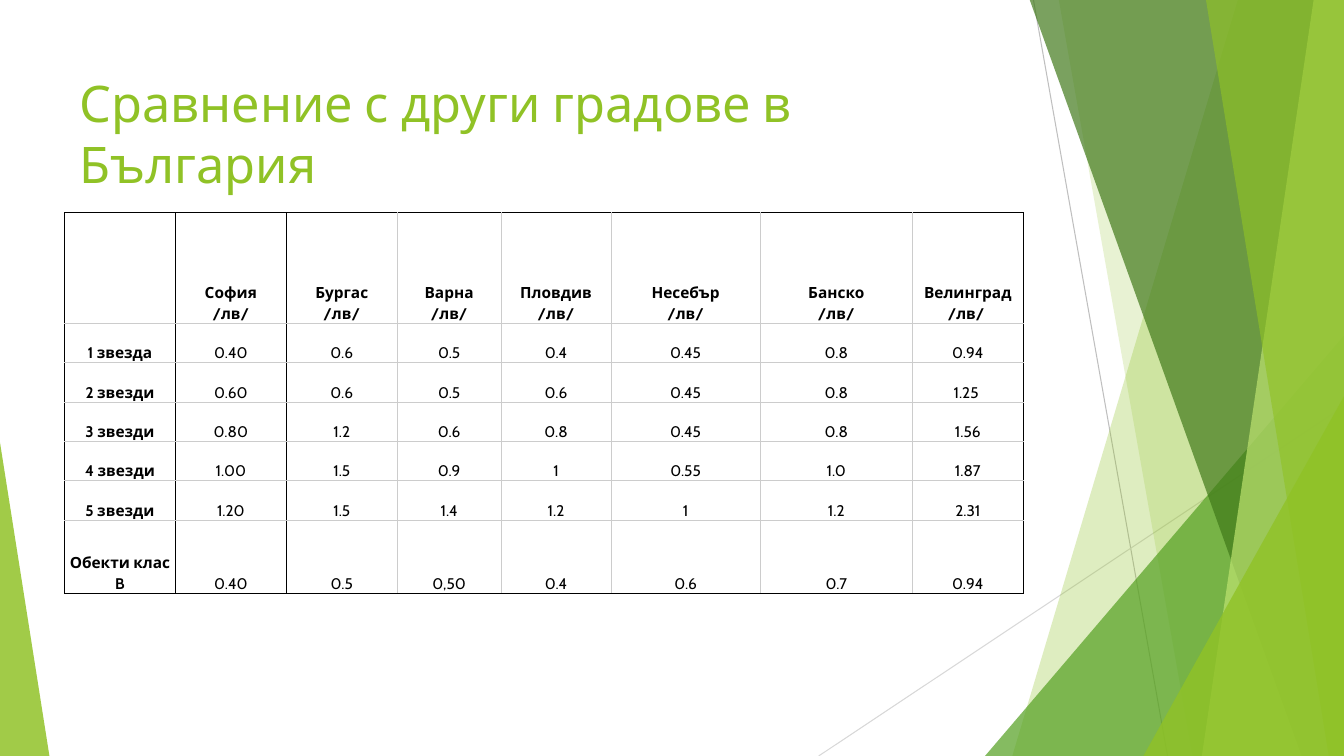
from lxml.etree import SubElement
from pptx import Presentation
from pptx.dml.color import RGBColor
from pptx.enum.shapes import MSO_CONNECTOR, MSO_SHAPE
from pptx.enum.text import MSO_ANCHOR, PP_ALIGN
from pptx.oxml.ns import qn
from pptx.util import Inches, Pt

LIME, GRAY, BLACK, WHITE = "90C226", "CCCCCC", "000000", "FFFFFF"
WIDE, HIGH = 13.33, 7.5

# Slanted bands down to the right edge: top x, bottom x, colour, opacity
BACK = [(12.28, 10.04, LIME, 29), (10.5, 11.83, LIME, 20)]
FRONT = [(10.21, 12.91, "3F7818", 69), (13.03, 11.92, "BFE471", 69),
         (11.96, 13.18, LIME, 64)]

CITIES = ["София", "Бургас", "Варна", "Пловдив", "Несебър", "Банско", "Велинград"]
RATES = [
    ["1 звезда", "0.40", "0.6", "0.5", "0.4", "0.45", "0.8", "0.94"],
    ["2 звезди", "0.60", "0.6", "0.5", "0.6", "0.45", "0.8", "1.25 "],
    ["3 звезди", "0.80", "1.2", "0.6", "0.8", "0.45", "0.8", "1.56"],
    ["4 звезди", "1.00", "1.5", "0.9", "1", "0.55", "1.0", "1.87"],
    ["5 звезди", "1.20", "1.5", "1.4", "1.2", "1", "1.2", "2.31"],
    ["Обекти клас B", "0.40", "0.5", "0,50", "0.4", "0.6", "0.7", "0.94"],
]
COLS = [1.1, 1.1, 1.1, 1.03, 1.09, 1.48, 1.51, 1.1]
ROWS = [1.1] + [0.39] * 5 + [0.73]


def color(code):
    return RGBColor.from_string(code)


class Deck:
    head, body = "Karla", "Cabin"

    def __init__(self):
        self.file = Presentation()
        self.file.slide_width = Inches(WIDE)
        self.file.slide_height = Inches(HIGH)
        self.slide = self.file.slides.add_slide(self.file.slide_layouts[6])
        self.shapes = self.slide.shapes

    def line(self, x1, y1, x2, y2, code):
        link = self.shapes.add_connector(
            MSO_CONNECTOR.STRAIGHT, Inches(x1), Inches(y1), Inches(x2), Inches(y2))
        link.line.color.rgb = color(code)
        link.line.width = Pt(0.75)
        SubElement(link._element.spPr, qn("a:effectLst"))

    def paint(self, shape, code, alpha):
        shape.shadow.inherit = False
        shape.fill.solid()
        shape.fill.fore_color.rgb = color(code)
        shape.line.fill.background()
        tint = shape._element.spPr.find(qn("a:solidFill"))[0]
        SubElement(tint, qn("a:alpha"), val=str(alpha * 1000))

    def band(self, top, base, code, alpha):
        pen = self.shapes.build_freeform(Inches(top), Inches(-0.01))
        spots = [(WIDE, -0.01), (WIDE, HIGH), (base, HIGH)]
        pen.add_line_segments([(Inches(x), Inches(y)) for x, y in spots])
        self.paint(pen.convert_to_shape(), code, alpha)

    def wedge(self, x, y, wide, high, peak, code, alpha):
        shape = self.shapes.add_shape(
            MSO_SHAPE.ISOSCELES_TRIANGLE, Inches(x), Inches(y), Inches(wide), Inches(high))
        shape.adjustments[0] = peak
        self.paint(shape, code, alpha)

    def text(self, para, words, size, font, code, bold=False):
        run = para.add_run()
        run.text = words
        run.font.size = Pt(size)
        run.font.name = font
        run.font.bold = bold
        run.font.color.rgb = color(code)

    def title(self, words, x, y, wide, high):
        box = self.shapes.add_textbox(Inches(x), Inches(y), Inches(wide), Inches(high))
        box.text_frame.word_wrap = True
        self.text(box.text_frame.paragraphs[0], words, 36, self.head, LIME)

    def edge(self, cell, side, code):
        rule = SubElement(cell._tc.get_or_add_tcPr(), qn("a:ln" + side), w=str(Pt(0.75)))
        fill = SubElement(rule, qn("a:solidFill"))
        SubElement(fill, qn("a:srgbClr"), val=code)

    def cell(self, cell, lines, bold, dark):
        cell.margin_left = cell.margin_right = Inches(0.03)
        cell.margin_top = cell.margin_bottom = 0
        cell.vertical_anchor = MSO_ANCHOR.BOTTOM
        for side in "LRTB":
            self.edge(cell, side, BLACK if side in dark else GRAY)
        cell.fill.solid()
        cell.fill.fore_color.rgb = color(WHITE)
        frame = cell.text_frame
        for i, words in enumerate(lines):
            para = frame.add_paragraph() if i else frame.paragraphs[0]
            para.alignment = PP_ALIGN.CENTER
            para.line_spacing = 1.15
            self.text(para, words, 11, self.body, BLACK, bold)

    def table(self, data, x, y):
        table = self.shapes.add_table(
            len(ROWS), len(COLS), Inches(x), Inches(y),
            Inches(sum(COLS)), Inches(sum(ROWS))).table
        table.first_row = table.horz_banding = False
        for col, wide in zip(table.columns, COLS):
            col.width = Inches(wide)
        for row, high in zip(table.rows, ROWS):
            row.height = Inches(high)
        for r, items in enumerate(data):
            for c, lines in enumerate(items):
                # Black frame, plus black rules around the first two columns
                tests = {"L": c <= 2, "R": c <= 1 or c == len(COLS) - 1,
                         "T": r == 0, "B": r == len(ROWS) - 1}
                dark = [side for side, on in tests.items() if on]
                self.cell(table.cell(r, c), lines, r == 0 or c == 0, dark)


def main():
    deck = Deck()

    # Backdrop
    deck.line(10.25, 0, 11.58, HIGH, "BFBFBF")
    deck.line(WIDE, 4.03, 8.12, HIGH, "D8D8D8")
    for band in BACK:
        deck.band(*band)
    deck.wedge(9.77, 3.33, 3.56, 4.17, 1, "54A021", 71)
    for band in FRONT:
        deck.band(*band)
    deck.wedge(11.34, 3.93, 1.99, 3.57, 1, LIME, 80)
    deck.wedge(0, 4.39, 0.49, 3.11, 0, LIME, 84)

    # Title
    deck.title("Сравнение с други градове в България", 0.69, 0.67, 9.4, 1.44)

    # Rates by city
    top = [[]] + [[city, "/лв/"] for city in CITIES]
    top[-1][1] += " "
    deck.table([top] + [[[words] for words in row] for row in RATES], 0.64, 2.11)

    deck.file.save("out.pptx")


if __name__ == "__main__":
    main()
